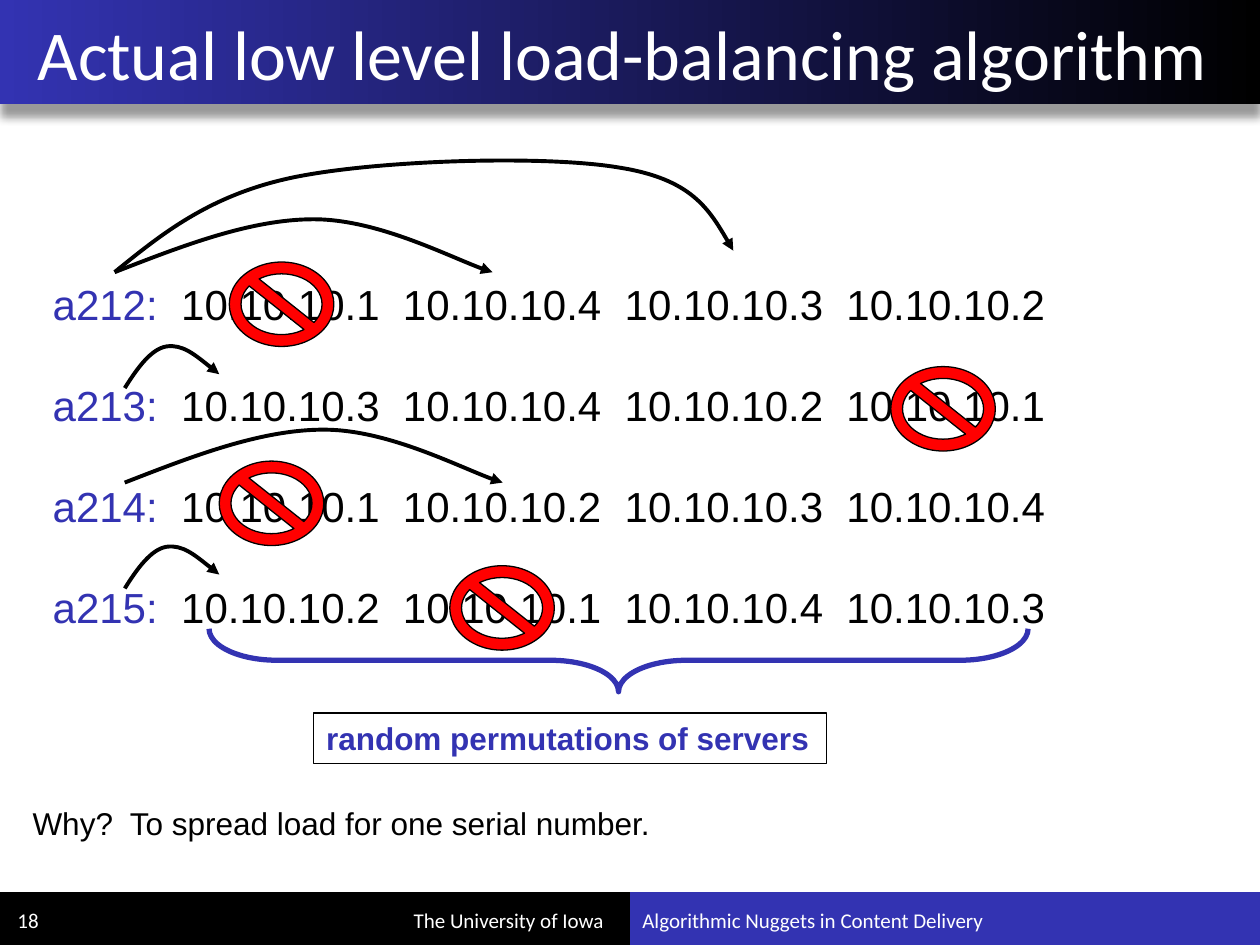
from lxml import etree
from pptx import Presentation
from pptx.dml.color import RGBColor
from pptx.enum.shapes import MSO_SHAPE
from pptx.enum.text import MSO_ANCHOR, PP_ALIGN
from pptx.oxml.ns import qn
from pptx.util import Inches, Pt

RECT, BRACE, NO_SIGN = MSO_SHAPE.RECTANGLE, MSO_SHAPE.LEFT_BRACE, MSO_SHAPE.NO_SYMBOL
TOP, MIDDLE = MSO_ANCHOR.TOP, MSO_ANCHOR.MIDDLE
LEFT, RIGHT = PP_ALIGN.LEFT, PP_ALIGN.RIGHT

COLORS = {"blue": "3333B2", "black": "000000", "white": "FFFFFF", "red": "FF0000"}

TITLE = "Actual low level load-balancing algorithm"
FOOTERS = [
    ("The University of Iowa", (1.38, 7.1, 3.51, 0.4), RIGHT),
    ("Algorithmic Nuggets in Content Delivery", (5, 7.1, 4.25, 0.4), LEFT),
    ("18", (0.04, 7.1, 1.17, 0.4), LEFT),
]
CAPTION = "random permutations of servers"
REASON = "Why?  To spread load for one serial number."
SERVER_ORDERS = [
    ("a212:", (1, 4, 3, 2)),
    ("a213:", (3, 4, 2, 1)),
    ("a214:", (1, 2, 3, 4)),
    ("a215:", (2, 1, 4, 3)),
]
FIRST_COLUMN, COLUMN_STEP = 1.02, 1.76
DOWN_SERVERS = [(1.82, 2.08), (7.07, 2.91), (1.74, 3.66), (3.57, 4.49)]

WIDE_ARC = [(0.54, -0.21), (1.08, -0.42), (1.58, -0.42),
            (2.08, -0.42), (2.76, -0.07), (3, 0)]
SHORT_ARC = [(0.1, -0.16), (0.21, -0.31), (0.33, -0.33),
             (0.46, -0.35), (0.6, -0.23), (0.75, -0.11)]
LONG_ARC = [(0.37, -0.3), (0.75, -0.61), (1.41, -0.75),
            (2.08, -0.89), (3.41, -0.93), (4, -0.83),
            (4.58, -0.74), (4.75, -0.45), (4.91, -0.17)]
ARROWS = [
    ((0.91, 2.16), WIDE_ARC),
    ((0.99, 3.83), WIDE_ARC),
    ((0.99, 3.08), SHORT_ARC),
    ((0.99, 4.67), SHORT_ARC),
    ((0.91, 2.16), LONG_ARC),
]

prs = Presentation()
prs.slide_width, prs.slide_height = Inches(10), Inches(7.5)
shapes = prs.slides.add_slide(prs.slide_layouts[6]).shapes


def rgb(color):
    return RGBColor.from_string(COLORS[color])


def sub(parent, tag, **attributes):
    return etree.SubElement(parent, qn(tag), {k: str(v) for k, v in attributes.items()})


def paint(shape, fill=None, line=None, width=0.75):
    shape.shadow.inherit = False
    if fill:
        shape.fill.solid()
        shape.fill.fore_color.rgb = rgb(fill)
    else:
        shape.fill.background()
    if line:
        shape.line.color.rgb = rgb(line)
        shape.line.width = Pt(width)
    else:
        shape.line.fill.background()


def add_preset(kind, box, **look):
    shape = shapes.add_shape(kind, *map(Inches, box))
    paint(shape, **look)
    return shape


def add_run(paragraph, text, color, **font):
    run = paragraph.add_run()
    run.text = text
    run.font.color.rgb = rgb(color)
    for key, value in font.items():
        setattr(run.font, key, value)


def write(shape, text, color, anchor=TOP, align=LEFT, **font):
    frame = shape.text_frame
    frame.word_wrap = True
    frame.vertical_anchor = anchor
    paragraph = frame.paragraphs[0]
    paragraph.alignment = align
    add_run(paragraph, text, color, **font)
    return paragraph


def add_text(box, *args, **options):
    return write(shapes.add_textbox(*map(Inches, box)), *args, **options)


def add_curved_arrow(start, arc):
    x, y = start
    builder = shapes.build_freeform(Inches(x), Inches(y))
    points = [(Inches(x + dx), Inches(y + dy)) for dx, dy in arc]
    builder.add_line_segments(points, close=False)
    arrow = builder.convert_to_shape()
    paint(arrow, line="black", width=2.25)
    path = arrow._element.spPr.find(".//" + qn("a:path"))
    segments = path.findall(qn("a:lnTo"))
    for first in range(0, len(segments), 3):
        curve = sub(path, "a:cubicBezTo")
        for segment in segments[first:first + 3]:
            curve.append(segment[0])
            path.remove(segment)
    sub(arrow._element.spPr.find(qn("a:ln")), "a:tailEnd", type="triangle")


add_preset(RECT, (5, 7.08, 5, 0.42), fill="blue")
add_preset(RECT, (0, 7.08, 5, 0.42), fill="black")

banner = add_preset(RECT, (0, 0, 10, 0.83))
banner.fill.gradient()
banner.fill.gradient_angle = 180
for stop, color in zip(banner.fill.gradient_stops, ("black", "blue")):
    stop.color.rgb = rgb(color)
shadow = sub(banner._element.spPr.find(qn("a:effectLst")), "a:outerShdw",
             blurRad=Pt(5), dist=Pt(7), dir=90 * 60000, algn="t", rotWithShape=0)
sub(sub(shadow, "a:srgbClr", val=COLORS["black"]), "a:alpha", val=40000)

heading = add_text((0, 0, 9.75, 0.83), TITLE, "white", MIDDLE, name="Calibri", size=Pt(40))
heading._p.get_or_add_pPr().set("marL", str(Inches(0.2)))
for text, box, align in FOOTERS:
    add_text(box, text, "white", MIDDLE, align, name="Calibri", size=Pt(12))

server_list = shapes.add_textbox(*map(Inches, (0.32, 2.16, 8.16, 2.93))).text_frame
server_list.word_wrap = True
for row, (serial, order) in enumerate(SERVER_ORDERS):
    paragraph = server_list.add_paragraph() if row else server_list.paragraphs[0]
    if row:
        paragraph.space_before = Pt(29)
    tabs = sub(paragraph._p.get_or_add_pPr(), "a:tabLst")
    for column in range(len(order)):
        sub(tabs, "a:tab", pos=Inches(FIRST_COLUMN + column * COLUMN_STEP), algn="l")
    addresses = "".join(f"\t10.10.10.{server}" for server in order)
    for text, color in ((serial, "blue"), (addresses, "black")):
        add_run(paragraph, text, color, name="Arial", size=Pt(24))

for left, top in DOWN_SERVERS:
    sign = add_preset(NO_SIGN, (left, top, 0.83, 0.67), fill="red", line="black")
    sign.adjustments[0] = 0.14

brace = add_preset(BRACE, (4.66, 1.99, 0.5, 6.5), line="blue", width=3)
brace.rotation = 270
brace.adjustments[0], brace.adjustments[1] = 1.08, 0.5

caption = add_preset(RECT, (2.49, 5.66, 4.07, 0.4), line="black")
write(caption, CAPTION, "blue", name="Arial", size=Pt(18), bold=True)
add_text((0.16, 6.33, 7.25, 0.5), REASON, "black", name="Arial", size=Pt(18))

for start, arc in ARROWS:
    add_curved_arrow(start, arc)

prs.save("out.pptx")
